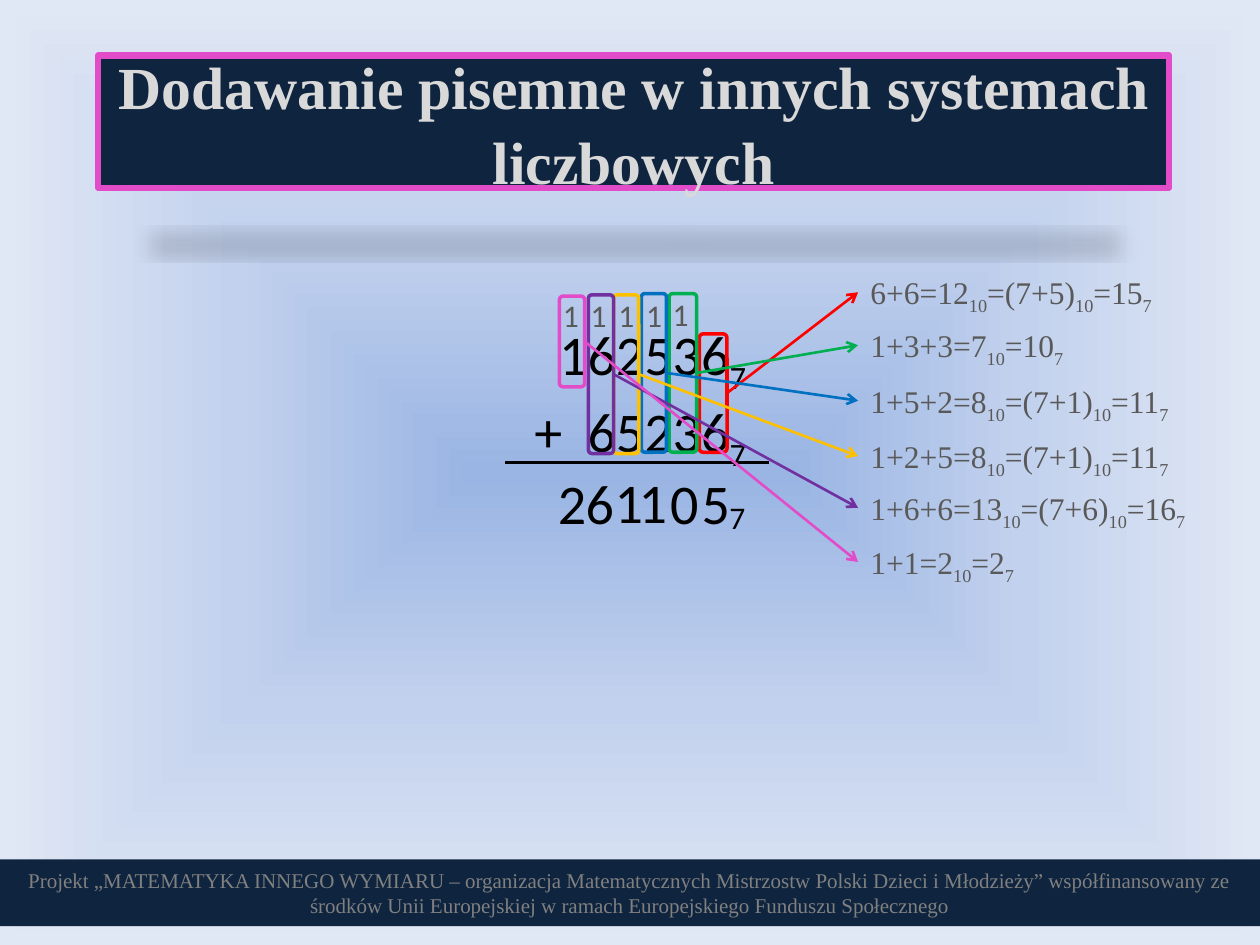
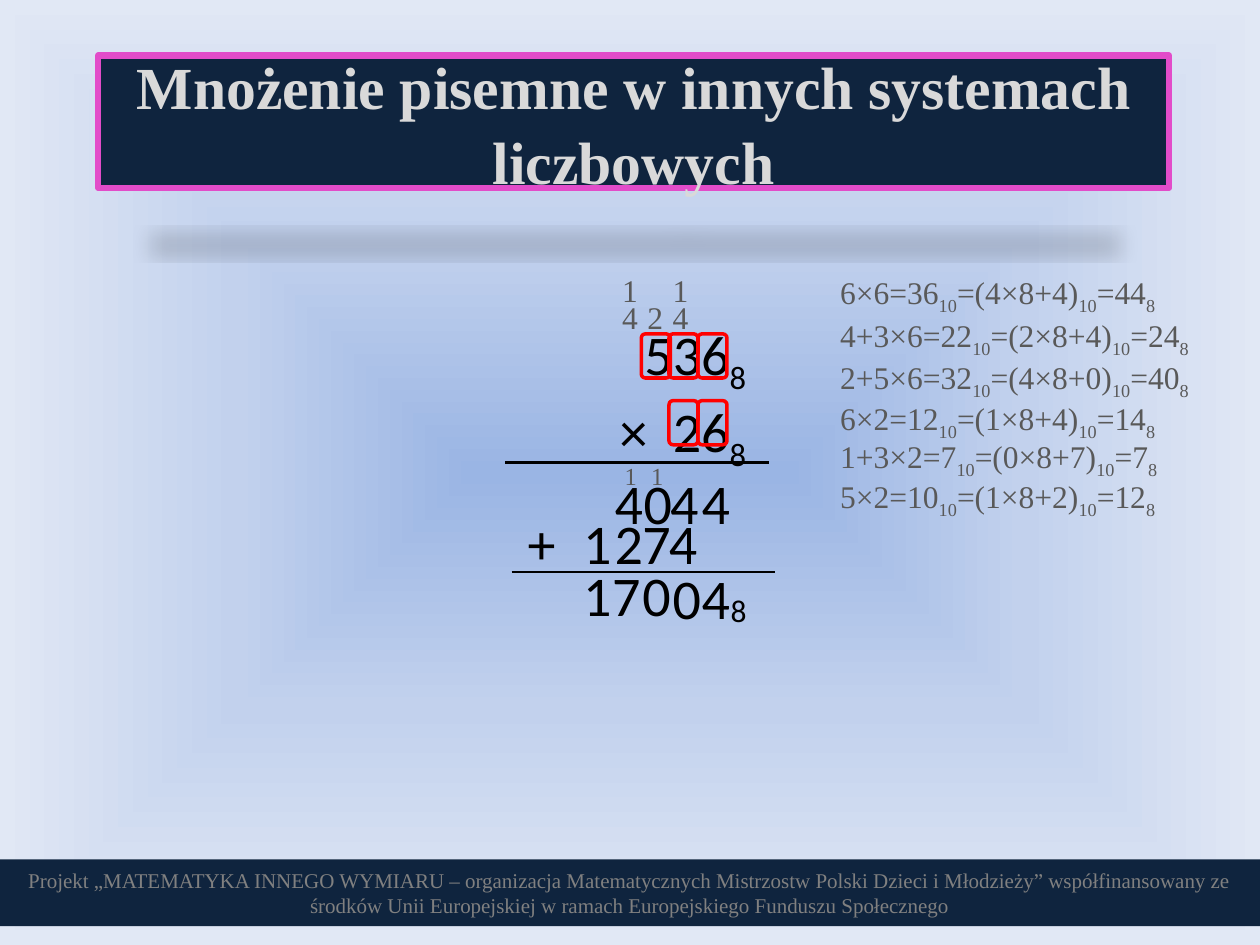
import pptx
import pptx.dml.color
import pptx.enum.shapes
import pptx.enum.text
import pptx.oxml
import pptx.oxml.ns
import pptx.util
import lxml.etree

Inches = pptx.util.Inches
Pt = pptx.util.Pt
qn = pptx.oxml.ns.qn
SHAPES = pptx.enum.shapes.MSO_SHAPE
ALIGN = pptx.enum.text.PP_ALIGN

COLORS = {
    "navy": "0F243E", "pink": "E24CC9", "title": "D9D9D9", "footer": "808080",
    "digit": "000000", "note": "595959", "red": "FF0000", "green": "00B050",
    "blue": "0070C0", "amber": "FFC000", "violet": "7030A0",
}
BACKGROUND_STOPS = [(0, "9AB5E4"), (50, "C2D1ED"), (100, "E1E8F5")]
SERIF = "Times New Roman"
SANS = "Calibri"
FOOTER = (
    "Projekt „MATEMATYKA INNEGO WYMIARU – organizacja Matematycznych Mistrzostw "
    "Polski Dzieci i Młodzieży” współfinansowany ze środków Unii Europejskiej "
    "w ramach Europejskiego Funduszu Społecznego"
)

# Text between bars is set as a subscript.
ADDITION = {
    "title": "Dodawanie pisemne w innych systemach liczbowych",
    "operands": ["162536|7", "+  65236|7"],
    "columns": [
        {"color": "red", "equation": ("6+6=12|10|=(7+5)|10|=15|7", 2.12),
         "digit": ("5", 5.47, 3.67), "carry": (5.24, 2.29), "box": (5.55, 2.65, 0.22, 0.94)},
        {"color": "green", "equation": ("1+3+3=7|10|=10|7", 2.54),
         "digit": ("0", 5.22, 3.67), "carry": (5.03, 2.3), "box": (5.31, 2.33, 0.22, 1.26)},
        {"color": "blue", "equation": ("1+5+2=8|10|=(7+1)|10|=11|7", 2.98),
         "digit": ("1", 4.97, 3.66), "carry": (4.81, 2.3), "box": (5.09, 2.33, 0.2, 1.26)},
        {"color": "amber", "equation": ("1+2+5=8|10|=(7+1)|10|=11|7", 3.42),
         "digit": ("1", 4.78, 3.66), "carry": (4.59, 2.3), "box": (4.87, 2.34, 0.2, 1.26)},
        {"color": "violet", "equation": ("1+6+6=13|10|=(7+6)|10|=16|7", 3.83),
         "digit": ("6", 4.55, 3.67), "carry": (4.37, 2.3), "box": (4.67, 2.34, 0.2, 1.26)},
        {"color": "pink", "equation": ("1+1=2|10|=2|7", 4.26),
         "digit": ("2", 4.33, 3.67), "carry": None, "box": (4.44, 2.35, 0.2, 0.72)},
    ],
    "base": ("7", 5.69, 3.9),
}
MULTIPLICATION = {
    "title": "Mnożenie pisemne w innych systemach liczbowych",
    "operands": ["536|8", "×  26|8"],
    "equations": [
        ("6×6=36|10|=(4×8+4)|10|=44|8", 2.12),
        ("4+3×6=22|10|=(2×8+4)|10|=24|8", 2.46),
        ("2+5×6=32|10|=(4×8+0)|10|=40|8", 2.79),
        ("6×2=12|10|=(1×8+4)|10|=14|8", 3.12),
        ("1+3×2=7|10|=(0×8+7)|10|=7|8", 3.42),
        ("5×2=10|10|=(1×8+2)|10|=12|8", 3.74),
    ],
    "digit_rows": [
        ("4044", 3.67, [4.78, 5.01, 5.22, 5.47]),
        ("+1274", 3.99, [4.09, 4.53, 4.78, 5.0, 5.21]),
        ("170", 4.4, [4.53, 4.76, 5.0]),
        ("04", 4.42, [5.24, 5.47]),
    ],
    "carry_rows": [
        ("11", 2.1, [4.84, 5.24], 18),
        ("424", 2.32, [4.84, 5.04, 5.24], 18),
        ("11", 3.61, [4.86, 5.07], 14),
    ],
    "box_rows": [(2.65, [5.09, 5.31, 5.54]), (3.18, [5.31, 5.54])],
    "base": ("8", 5.7, 4.64),
}


def rgb(name):
    return pptx.dml.color.RGBColor.from_string(COLORS[name])


def style_run(run, size, font, color, bold=False):
    run.font.size = Pt(size)
    run.font.name = font
    run.font.bold = bold
    run.font.color.rgb = rgb(color)


def add_text(slide, lines, left, top, width, height, size, font, color, align=None, wrap=False):
    shape = slide.shapes.add_textbox(Inches(left), Inches(top), Inches(width), Inches(height))
    frame = shape.text_frame
    frame.word_wrap = wrap
    frame.auto_size = pptx.enum.text.MSO_AUTO_SIZE.SHAPE_TO_FIT_TEXT
    for number, line in enumerate(lines):
        paragraph = frame.paragraphs[0] if number == 0 else frame.add_paragraph()
        paragraph.alignment = align
        for index, part in enumerate(line.split("|")):
            if not part:
                continue
            run = paragraph.add_run()
            run.text = part
            style_run(run, size, font, color)
            if index % 2:
                run.font._element.set("baseline", "-25000")
    return shape


def add_digit(slide, text, left, top):
    add_text(slide, [text], left, top, 0.43, 0.64, 32, SANS, "digit")


def add_carry(slide, text, left, top, font, size=18):
    add_text(slide, [text], left, top, 0.33 if size == 18 else 0.3, 0.4, size, font, "note")


def add_equation(slide, text, left, top, width):
    return add_text(slide, [text], left, top, width, 0.4, 18, SERIF, "note", wrap=True)


def add_box(slide, left, top, width, height, color):
    shape = slide.shapes.add_shape(
        SHAPES.ROUNDED_RECTANGLE, Inches(left), Inches(top), Inches(width), Inches(height))
    shape.adjustments[0] = 0.14
    shape.shadow.inherit = False
    shape.fill.background()
    shape.line.color.rgb = rgb(color)
    shape.line.width = Pt(2)
    return shape


def add_line(slide, color, start=(0, 0), end=(0, 0)):
    connector = slide.shapes.add_connector(
        pptx.enum.shapes.MSO_CONNECTOR.STRAIGHT, *[Inches(value) for value in (*start, *end)])
    connector.line.color.rgb = rgb(color)
    connector.line.width = Pt(1.5)
    lxml.etree.SubElement(connector.element.spPr, qn("a:effectLst"))
    return connector


def add_arrow(slide, box, equation, color):
    connector = add_line(slide, color)
    connector.begin_connect(box, 3)
    connector.end_connect(equation, 1)
    outline = connector.element.spPr.find(qn("a:ln"))
    lxml.etree.SubElement(outline, qn("a:tailEnd"), type="arrow")


def add_band(slide, text, left, top, width, height, size, color, bold=False):
    shape = slide.shapes.add_shape(
        SHAPES.RECTANGLE, Inches(left), Inches(top), Inches(width), Inches(height))
    shape.shadow.inherit = False
    shape.fill.solid()
    shape.fill.fore_color.rgb = rgb("navy")
    shape.line.fill.background()
    frame = shape.text_frame
    frame.word_wrap = True
    frame.vertical_anchor = pptx.enum.text.MSO_ANCHOR.MIDDLE
    frame.text = text
    frame.paragraphs[0].alignment = ALIGN.CENTER
    style_run(frame.paragraphs[0].runs[0], size, SERIF, color, bold)
    return shape


def add_title(slide, text):
    shape = add_band(slide, text, 0.78, 0.44, 8.5, 1.05, 34.1, "title", bold=True)
    shape.text_frame.paragraphs[0].line_spacing = 1.05
    shape.line.color.rgb = rgb("pink")
    shape.line.width = Pt(3.5)
    effects = shape.element.spPr.find(qn("a:effectLst"))
    shadow = lxml.etree.SubElement(
        effects, qn("a:outerShdw"), blurRad=str(Pt(12)), dist=str(Pt(25)),
        dir="5400000", sx="90000", sy="-19000", rotWithShape="0")
    tint = lxml.etree.SubElement(shadow, qn("a:srgbClr"), val="000000")
    lxml.etree.SubElement(tint, qn("a:alpha"), val="15000")


def set_background(slide):
    slide.background.fill.gradient()
    gradient = next(slide.element.iter(qn("a:gradFill")))
    for child in list(gradient):
        gradient.remove(child)
    stops = lxml.etree.SubElement(gradient, qn("a:gsLst"))
    for position, color in BACKGROUND_STOPS:
        stop = lxml.etree.SubElement(stops, qn("a:gs"), pos=str(position * 1000))
        lxml.etree.SubElement(stop, qn("a:srgbClr"), val=color)
    shade = lxml.etree.SubElement(gradient, qn("a:path"), path="shape")
    sides = dict.fromkeys("ltrb", "50000")
    lxml.etree.SubElement(shade, qn("a:fillToRect"), **sides)


def start_slide(presentation, content):
    slide = presentation.slides.add_slide(presentation.slide_layouts[6])
    set_background(slide)
    add_text(slide, content["operands"], 3.66, 2.49, 2.36, 1.18, 32, SANS, "digit",
             ALIGN.RIGHT, wrap=True)
    add_line(slide, "digit", (4.01, 3.67), (6.1, 3.67))
    return slide


def finish_slide(slide, content):
    text, left, top = content["base"]
    add_text(slide, [text], left, top, 0.33, 0.4, 18, SANS, "digit")
    add_band(slide, FOOTER, 0, 6.82, 10, 0.53, 12, "footer")
    add_title(slide, content["title"])


def build_addition(presentation):
    slide = start_slide(presentation, ADDITION)
    for column in ADDITION["columns"]:
        text, top = column["equation"]
        equation = add_equation(slide, text, 6.81, top, 2.83)
        add_digit(slide, *column["digit"])
        if column["carry"]:
            add_carry(slide, "1", *column["carry"], SANS)
        box = add_box(slide, *column["box"], column["color"])
        add_arrow(slide, box, equation, column["color"])
    finish_slide(slide, ADDITION)


def build_multiplication(presentation):
    slide = start_slide(presentation, MULTIPLICATION)
    for text, top in MULTIPLICATION["equations"]:
        add_equation(slide, text, 6.57, top, 3.15)
    for digits, top, lefts in MULTIPLICATION["digit_rows"]:
        for digit, left in zip(digits, lefts):
            add_digit(slide, digit, left, top)
    for digits, top, lefts, size in MULTIPLICATION["carry_rows"]:
        for digit, left in zip(digits, lefts):
            add_carry(slide, digit, left, top, SERIF, size)
    for top, lefts in MULTIPLICATION["box_rows"]:
        for left in lefts:
            add_box(slide, left, top, 0.23, 0.35, "red")
    add_line(slide, "digit", (4.06, 4.54), (6.15, 4.54))
    finish_slide(slide, MULTIPLICATION)


def main():
    presentation = pptx.Presentation()
    presentation.slide_width = Inches(10)
    presentation.slide_height = Inches(7.5)
    build_addition(presentation)
    build_multiplication(presentation)
    presentation.save("out.pptx")


if __name__ == "__main__":
    main()
